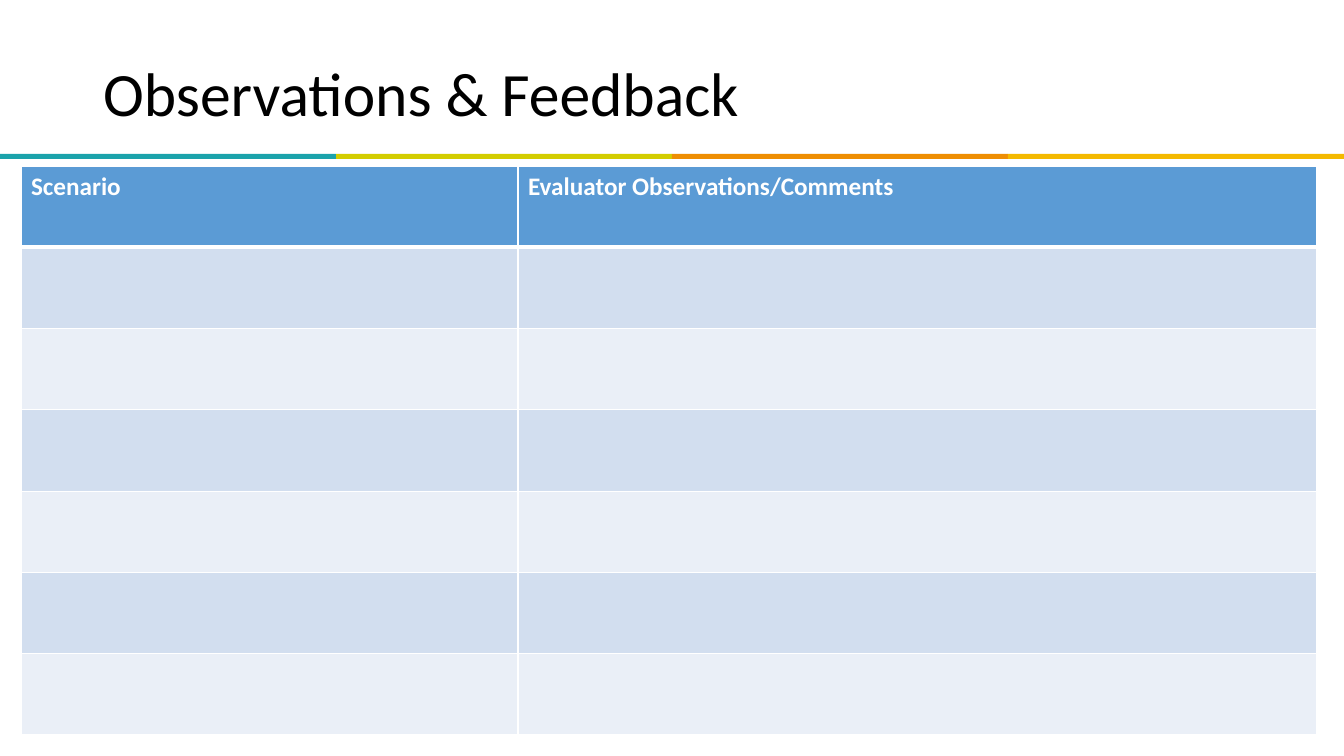
from lxml.etree import SubElement
from pptx import Presentation
from pptx.dml.color import RGBColor
from pptx.enum.shapes import MSO_SHAPE
from pptx.enum.text import MSO_ANCHOR, MSO_AUTO_SIZE, PP_ALIGN
from pptx.oxml.ns import qn
from pptx.util import Pt

EMU_PER_PX = 914400 / 100.8
SLIDE_WIDTH, SLIDE_HEIGHT = 1344, 756
COLORS = {
    "black": "000000",
    "white": "FFFFFF",
    "teal": "1BA3AB",
    "lime": "D3CD00",
    "orange": "EE8E03",
    "yellow": "F4B900",
    "header": "5B9BD5",
    "band_dark": "D2DEEF",
    "band_light": "EAEFF7",
}


def px(length):
    return round(length * EMU_PER_PX)


def color(name):
    return RGBColor.from_string(COLORS[name])


class SlideBuilder:
    font_name = "Calibri"

    def __init__(self, slide):
        self.slide = slide

    def add_run(self, paragraph, text, size, color_name, bold=False):
        run = paragraph.add_run()
        run.text = text
        run.font.name = self.font_name
        run.font.size = Pt(size)
        run.font.bold = bold
        run.font.color.rgb = color(color_name)

    def title(self, text, left, top, width, height):
        shape = self.slide.shapes.title
        shape.left, shape.top = px(left), px(top)
        shape.width, shape.height = px(width), px(height)
        frame = shape.text_frame
        frame.word_wrap = True
        frame.auto_size = MSO_AUTO_SIZE.NONE
        frame.vertical_anchor = MSO_ANCHOR.MIDDLE
        paragraph = frame.paragraphs[0]
        paragraph.alignment = PP_ALIGN.LEFT
        paragraph.line_spacing = 0.9
        self.add_run(paragraph, text, 44, "black")

    def bar(self, left, top, width, height, fill):
        shape = self.slide.shapes.add_shape(
            MSO_SHAPE.RECTANGLE, px(left), px(top), px(width), px(height))
        shape.shadow.inherit = False
        shape.fill.solid()
        shape.fill.fore_color.rgb = color(fill)
        shape.line.fill.background()

    def cell_borders(self, cell, top, bottom):
        properties = cell._tc.get_or_add_tcPr()
        widths = {"lnL": 1, "lnR": 1, "lnT": top, "lnB": bottom}
        for position, (tag, width) in enumerate(widths.items()):
            line = SubElement(properties, qn(f"a:{tag}"), w=str(Pt(width)))
            fill = SubElement(line, qn("a:solidFill"))
            SubElement(fill, qn("a:srgbClr"), val=COLORS["white"])
            properties.insert(position, line)

    def table(self, left, top, column_widths, height, headings, row_count):
        table = self.slide.shapes.add_table(
            row_count, len(headings), px(left), px(top),
            px(sum(column_widths)), px(height)).table
        table.horz_banding = False
        for column, width in zip(table.columns, column_widths):
            column.width = px(width)
        for index, row in enumerate(table.rows):
            row.height = px(height / row_count)
            band = "band_dark" if index % 2 else "band_light"
            for cell in row.cells:
                cell.fill.solid()
                cell.fill.fore_color.rgb = color(band if index else "header")
                self.cell_borders(cell, 3 if index == 1 else 1, 1 if index else 3)
        for cell, heading in zip(table.rows[0].cells, headings):
            paragraph = cell.text_frame.paragraphs[0]
            self.add_run(paragraph, heading, 18, "white", bold=True)


def main():
    presentation = Presentation()
    presentation.slide_width = px(SLIDE_WIDTH)
    presentation.slide_height = px(SLIDE_HEIGHT)
    builder = SlideBuilder(
        presentation.slides.add_slide(presentation.slide_layouts[5]))

    stripe_colors = ["teal", "lime", "orange", "yellow"]
    stripe_width = SLIDE_WIDTH // len(stripe_colors)
    for index, fill in enumerate(stripe_colors):
        builder.bar(index * stripe_width, 154, stripe_width, 5, fill)

    builder.title("Observations & Feedback", 93, 40, 838, 114)
    builder.table(21, 166, [497, 799], 569,
                  ["Scenario", "Evaluator Observations/Comments"], 7)
    presentation.save("out.pptx")


if __name__ == "__main__":
    main()
